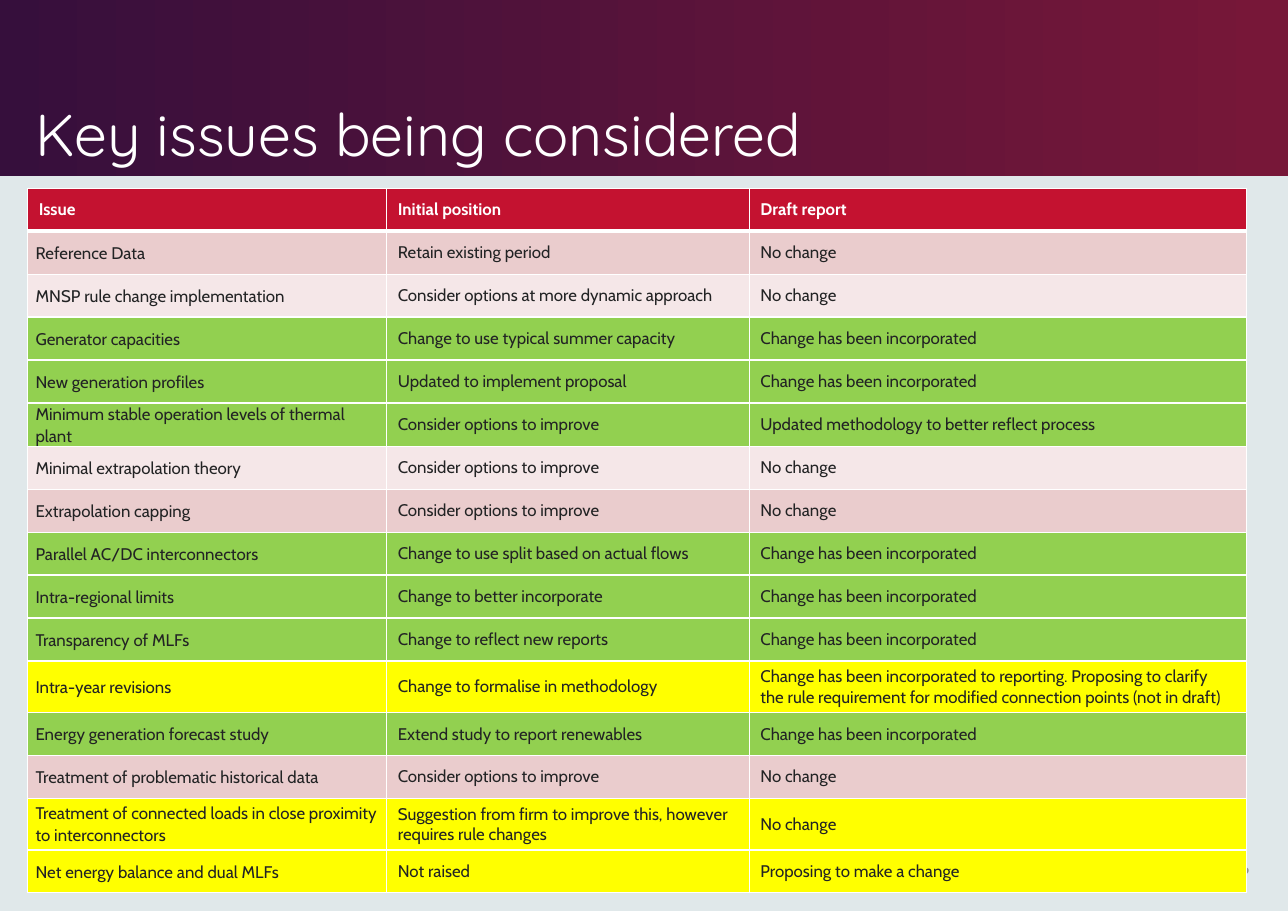
from lxml import etree
from pptx import Presentation, util as u
from pptx.dml.color import RGBColor
from pptx.enum import shapes, text
from pptx.oxml import ns

COLOURS = {
    "background": "E0E8EA", "banner_left": "360F3C", "banner_right": "771738",
    "white": "FFFFFF", "ink": "222324", "number": "8D8D8E", "header": "C41230",
    "odd": "EACCCD", "even": "F5E7E8", "done": "92D050", "attention": "FFFF00",
}
TITLE = "Key issues being considered"
PAGE_NUMBER = "6"
HEADINGS = ("Issue", "Initial position", "Draft report")
DONE = "Change has been incorporated"
IMPROVE = "Consider options to improve"
SAME = "No change"
# Issue, initial position, draft report, status (None keeps the banded fill)
ISSUES = [
    ("Reference Data", "Retain existing period", SAME, None),
    ("MNSP rule change implementation", "Consider options at more dynamic approach", SAME, None),
    ("Generator capacities", "Change to use typical summer capacity", DONE, "done"),
    ("New generation profiles", "Updated to implement proposal", DONE, "done"),
    ("Minimum stable operation levels of thermal plant", IMPROVE,
     "Updated methodology to better reflect process", "done"),
    ("Minimal extrapolation theory", IMPROVE, SAME, None),
    ("Extrapolation capping", IMPROVE, SAME, None),
    ("Parallel AC/DC interconnectors", "Change to use split based on actual flows", DONE, "done"),
    ("Intra-regional limits", "Change to better incorporate", DONE, "done"),
    ("Transparency of MLFs", "Change to reflect new reports", DONE, "done"),
    ("Intra-year revisions", "Change to formalise in methodology",
     "Change has been incorporated to reporting. Proposing to clarify the rule requirement "
     "for modified connection points (not in draft)", "attention"),
    ("Energy generation forecast study", "Extend study to report renewables", DONE, "done"),
    ("Treatment of problematic historical data", IMPROVE, SAME, None),
    ("Treatment of connected loads in close proximity to interconnectors",
     "Suggestion from firm to improve this, however requires rule changes", SAME, "attention"),
    ("Net energy balance and dual MLFs", "Not raised", "Proposing to make a change", "attention"),
]
COLUMN_WIDTHS = (8.28, 8.36, 11.46)
ROW_HEIGHT = 0.99


def colour(name):
    return RGBColor.from_string(COLOURS[name])


def style_text(paragraph, font_name, size, colour_name, bold=False):
    for run in paragraph.runs:
        run.font.name = font_name
        run.font.size = u.Pt(size)
        run.font.bold = bold
        run.font.color.rgb = colour(colour_name)


def add_label(slide, box, label, font_name, size, colour_name, anchor, alignment):
    frame = slide.shapes.add_textbox(*map(u.Cm, box)).text_frame
    frame.word_wrap = True
    frame.vertical_anchor = anchor
    frame.text = label
    paragraph = frame.paragraphs[0]
    paragraph.alignment = alignment
    style_text(paragraph, font_name, size, colour_name)
    return paragraph


def set_borders(cell, top, bottom):
    properties = cell._tc.get_or_add_tcPr()
    for side, width in (("L", 1), ("R", 1), ("T", top), ("B", bottom)):
        line = etree.SubElement(properties, ns.qn(f"a:ln{side}"), w=str(u.Pt(width)))
        fill = etree.SubElement(line, ns.qn("a:solidFill"))
        etree.SubElement(fill, ns.qn("a:srgbClr"), val=COLOURS["white"])


def fill_cell(cell, label, row, column, fill_name):
    is_header = row == 0
    set_borders(cell, top=3 if row == 1 else 1, bottom=3 if is_header else 1)
    cell.fill.solid()
    cell.fill.fore_color.rgb = colour(fill_name)
    cell.vertical_anchor = text.MSO_ANCHOR.MIDDLE
    cell.text_frame.text = label
    paragraph = cell.text_frame.paragraphs[0]
    style_text(paragraph, "Cabin", 11, "white" if is_header else "ink", is_header)
    if column == 0 and not is_header:
        cell.margin_left = cell.margin_right = u.Cm(0.18)
        cell.margin_top = cell.margin_bottom = 0
        paragraph.line_spacing = 1.07
        paragraph.space_after = u.Pt(2)


def main():
    presentation = Presentation()
    presentation.slide_width, presentation.slide_height = u.Cm(29.7), u.Cm(21)
    slide = presentation.slides.add_slide(presentation.slide_layouts[6])
    slide.background.fill.solid()
    slide.background.fill.fore_color.rgb = colour("background")

    # Banner
    banner = slide.shapes.add_shape(shapes.MSO_SHAPE.RECTANGLE, 0, 0,
                                    presentation.slide_width, u.Cm(4.06))
    banner.shadow.inherit = False
    banner.line.fill.background()
    banner.fill.gradient()
    banner.fill.gradient_angle = 0
    for stop, name in zip(banner.fill.gradient_stops, ("banner_left", "banner_right")):
        stop.color.rgb = colour(name)
    banner.fill.gradient_stops[0].position = 0
    banner.fill.gradient_stops[1].position = 0.99

    # Title and page number
    title = add_label(slide, (0.58, 0.41, 21.92, 3.63), TITLE, "Quicksand", 38.6, "white",
                      text.MSO_ANCHOR.BOTTOM, text.PP_ALIGN.LEFT)
    title.line_spacing = 0.9
    add_label(slide, (27.66, 19.46, 1.4, 1.12), PAGE_NUMBER, "Cabin", 10.5, "number",
              text.MSO_ANCHOR.MIDDLE, text.PP_ALIGN.RIGHT)

    # Issues table
    row_count = len(ISSUES) + 1
    table = slide.shapes.add_table(row_count, len(HEADINGS), u.Cm(0.64), u.Cm(4.34),
                                   u.Cm(sum(COLUMN_WIDTHS)), u.Cm(ROW_HEIGHT * row_count)).table
    for column, width in zip(table.columns, COLUMN_WIDTHS):
        column.width = u.Cm(width)
    for row in table.rows:
        row.height = u.Cm(ROW_HEIGHT)
    for row, (*labels, status) in enumerate([(*HEADINGS, "header"), *ISSUES]):
        fill_name = status or ("odd" if row % 2 else "even")
        for column, label in enumerate(labels):
            fill_cell(table.cell(row, column), label, row, column, fill_name)

    presentation.save("out.pptx")


if __name__ == "__main__":
    main()
